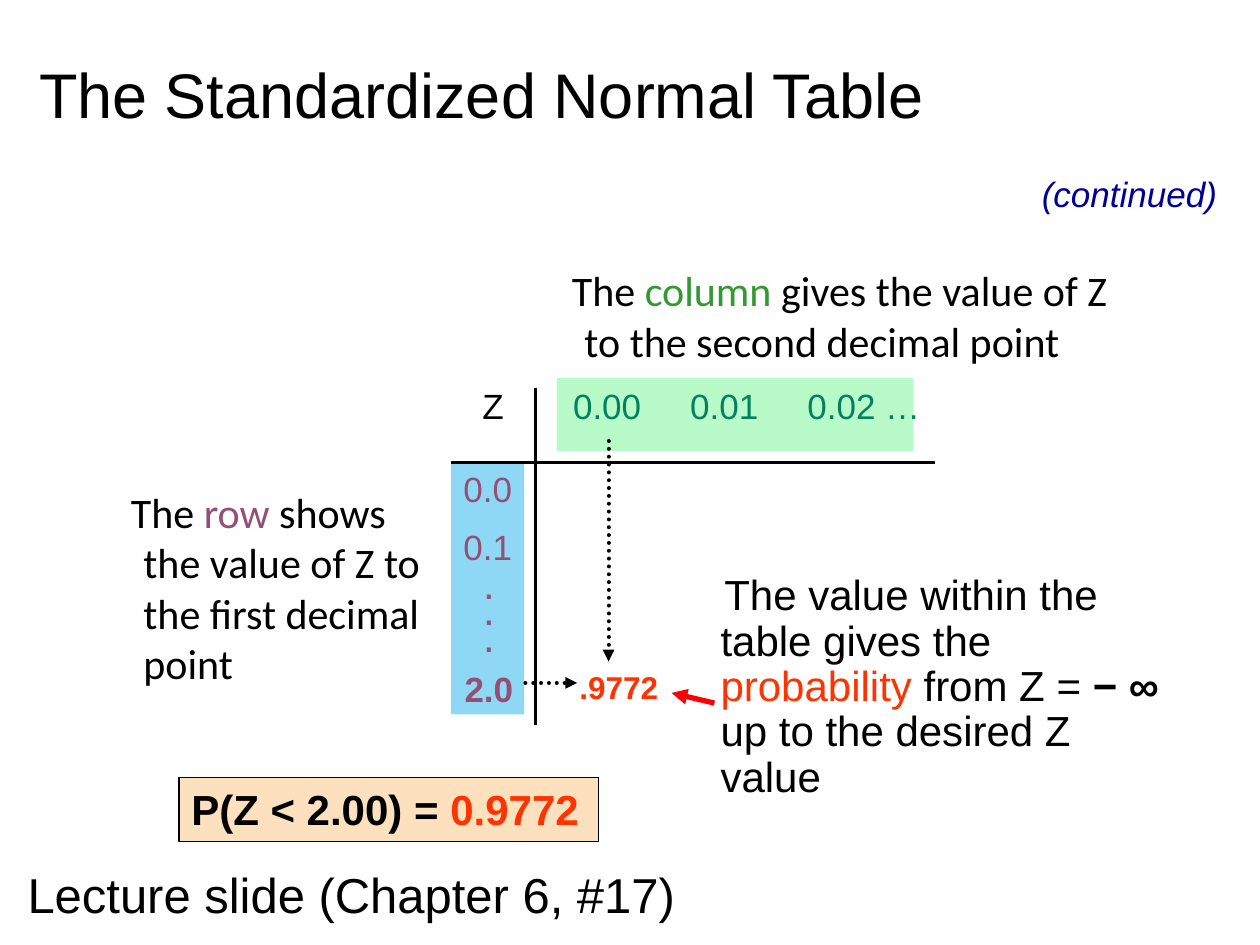
import pptx
import pptx.util
import pptx.dml.color
import pptx.enum.dml
import pptx.enum.shapes
import pptx.enum.text
import pptx.oxml.ns
import lxml.etree

Inches = pptx.util.Inches
Pt = pptx.util.Pt
ALIGN = pptx.enum.text.PP_ALIGN

THEME = {
    "black": "000000", "red": "FF3300", "arrow": "FF0000", "purple": "954F72",
    "green": "339933", "teal": "008260", "navy": "000099",
    "column_band": "B8FAC8", "row_band": "8ED8F6", "result_fill": "FDE0BD",
    "sans": "Arial", "note": "Calibri",
    "title_size": 36, "credit_size": 28, "note_size": 24, "table_size": 20, "value_size": 18,
}

TITLE = "The Standardized Normal Table"

BANDS = [
    ((4.42, 3, 2.83, 0.58), "column_band"),
    ((3.58, 3.67, 0.58, 2), "row_band"),
]

NOTES = [
    ((5, 4.46, 4.42, 2.17), 0.1,
     [("The value within the table gives the ", "black"), ("probability ", "red"),
      ("from Z = ", "black"), ("− ∞", "black", True), (" up to the desired Z value", "black")],
     {"font": "sans", "first_indent": 0.03, "line_spacing": 0.9}),
    ((0.42, 3.75, 3.08, 1.83), 0.11,
     [("The ", "black"), ("row ", "purple"),
      ("shows the value of Z to the first decimal point", "black")],
     {"font": "note", "first_indent": -0.1}),
    ((3.92, 2, 5.25, 1.08), 0.1,
     [("The ", "black"), ("column ", "green"),
      ("gives the value of Z to the second decimal point", "black")],
     {"font": "note", "first_indent": -0.1}),
]

LABELS = [
    ((4.5, 5.25, 1.08, 0.4), [[(".9772", "red", True)]], {"size": "value_size"}),
    ((3.42, 5.25, 0.92, 0.43), [[("2.0", "purple", True)]],
     {"size": "table_size", "align": ALIGN.CENTER}),
    ((3.67, 4.58, 0.42, 0.7), [[(".", "purple")]] * 3,
     {"size": "note_size", "align": ALIGN.CENTER, "line_spacing": 0.4, "gap": 3.6}),
    ((8.17, 1.32, 1.67, 0.43), [[("(continued)", "navy")]],
     {"size": "table_size", "italic": True}),
    ((0.12, 6.81, 5.55, 0.57), [[("Lecture slide (Chapter 6, #17)", "black")]],
     {"size": "credit_size"}),
]

COLUMN_HEADS = ["0.00", "0.01", "0.02 …"]
ROW_HEADS = ["0.0", "0.1"]
HEAD_TOP, HEAD_HEIGHT = 3, 0.43
CORNER_LEFT, CORNER_WIDTH = 3.73, 0.5
COLUMN_LEFT, COLUMN_STEP, COLUMN_WIDTH = 4.45, 0.93, 1.2
ROW_BOX = (3.58, 3.66, 0.75, 0.9)
ROW_GAP = 9.5

RESULT_BOX = (1.42, 6.17, 3.33, 0.51)
RESULT = [("P(Z < 2.00) = ", "black", True), ("0.9772", "red", True)]

LINES = [
    ((5.67, 5.58), (5.33, 5.5), "arrow", 3, False, True),
    ((4.83, 3.5), (4.83, 5.25), "black", 2.25, True, True),
    ((4.17, 5.42), (4.58, 5.42), "black", 2.25, True, True),
    ((4.25, 3.08), (4.25, 5.75), "black", 1.5, False, False),
    ((3.58, 3.67), (7.42, 3.67), "black", 1.5, False, False),
]


def color(name):
    return pptx.dml.color.RGBColor.from_string(THEME[name])


def add_xml(parent, tag, **attributes):
    return lxml.etree.SubElement(parent, pptx.oxml.ns.qn(tag), attributes)


def write_text(shape, paragraphs, size="note_size", font="sans", align=ALIGN.LEFT,
               line_spacing=None, gap=0, italic=False, top=0.05,
               left_indent=None, first_indent=None, anchor=pptx.enum.text.MSO_ANCHOR.TOP):
    frame = shape.text_frame
    frame.word_wrap = True
    frame.vertical_anchor = anchor
    frame.margin_top = Inches(top)
    for index, runs in enumerate(paragraphs):
        paragraph = frame.add_paragraph() if index else frame.paragraphs[0]
        paragraph.alignment = align
        paragraph.space_before = Pt(gap)
        if line_spacing:
            paragraph.line_spacing = line_spacing
        if left_indent is not None:
            properties = paragraph._p.get_or_add_pPr()
            properties.set("marL", str(Inches(left_indent)))
            properties.set("indent", str(Inches(first_indent)))
        for text, color_name, *bold in runs:
            run = paragraph.add_run()
            run.text = text
            run.font.size = Pt(THEME[size])
            run.font.name = THEME[font]
            run.font.color.rgb = color(color_name)
            run.font.bold = bool(bold)
            run.font.italic = italic


def add_box(slide, box):
    return slide.shapes.add_textbox(*map(Inches, box))


def add_rectangle(slide, box, fill, border=None):
    shape = slide.shapes.add_shape(pptx.enum.shapes.MSO_SHAPE.RECTANGLE, *map(Inches, box))
    shape.shadow.inherit = False
    shape.fill.solid()
    shape.fill.fore_color.rgb = color(fill)
    if border:
        shape.line.color.rgb = color(border)
        shape.line.width = Pt(0.75)
    else:
        shape.line.fill.background()
    return shape


def add_line(slide, start, end, color_name, width, dotted, arrow):
    connector = slide.shapes.add_connector(
        pptx.enum.shapes.MSO_CONNECTOR.STRAIGHT, *map(Inches, start + end))
    connector.line.color.rgb = color(color_name)
    connector.line.width = Pt(width)
    outline = connector.line._get_or_add_ln()
    if dotted:
        connector.line.dash_style = pptx.enum.dml.MSO_LINE.ROUND_DOT
        outline.set("cap", "rnd")
    if arrow:
        add_xml(outline, "a:tailEnd", type="triangle")
    add_xml(connector._element.spPr, "a:effectLst")


def add_z_table(slide):
    heads = [("Z", "black", CORNER_LEFT, CORNER_WIDTH)]
    heads += [(head, "teal", COLUMN_LEFT + index * COLUMN_STEP, COLUMN_WIDTH)
              for index, head in enumerate(COLUMN_HEADS)]
    for text, color_name, left, width in heads:
        write_text(add_box(slide, (left, HEAD_TOP, width, HEAD_HEIGHT)),
                   [[(text, color_name)]], size="table_size")
    write_text(add_box(slide, ROW_BOX), [[(head, "purple")] for head in ROW_HEADS],
               size="table_size", gap=ROW_GAP)


def main():
    presentation = pptx.Presentation()
    presentation.slide_width, presentation.slide_height = Inches(10), Inches(7.5)
    slide = presentation.slides.add_slide(presentation.slide_layouts[5])

    title = slide.shapes.title
    title.left, title.top, title.width, title.height = map(Inches, (0.21, 0.32, 7.75, 0.92))
    write_text(title, [[(TITLE, "black")]], size="title_size", line_spacing=0.9,
               anchor=pptx.enum.text.MSO_ANCHOR.MIDDLE)

    for box, fill in BANDS:
        add_rectangle(slide, box, fill)
    for box, top, runs, options in NOTES:
        write_text(add_box(slide, box), [runs], top=top, left_indent=0.62, **options)
    for box, paragraphs, options in LABELS:
        write_text(add_box(slide, box), paragraphs, **options)
    write_text(add_rectangle(slide, RESULT_BOX, "result_fill", "black"), [RESULT])
    add_z_table(slide)
    for line in LINES:
        add_line(slide, *line)

    presentation.save("out.pptx")


if __name__ == "__main__":
    main()
